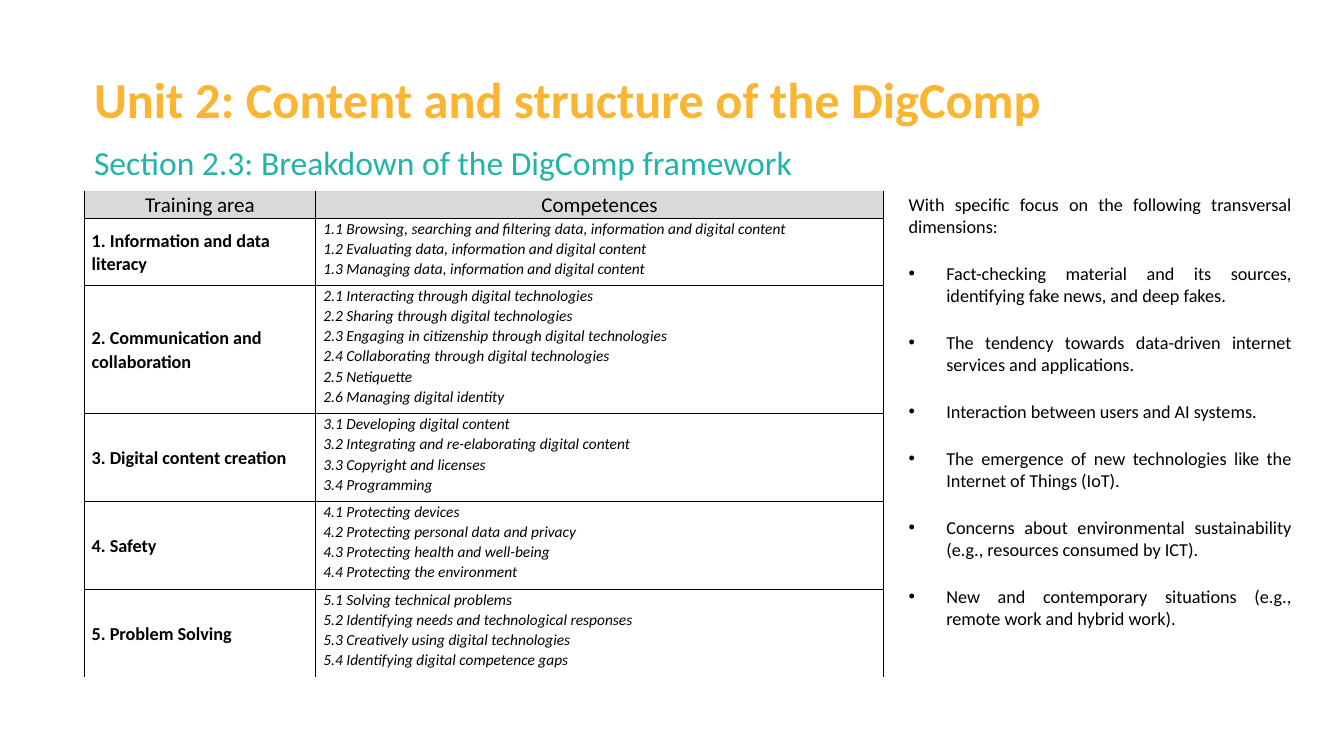
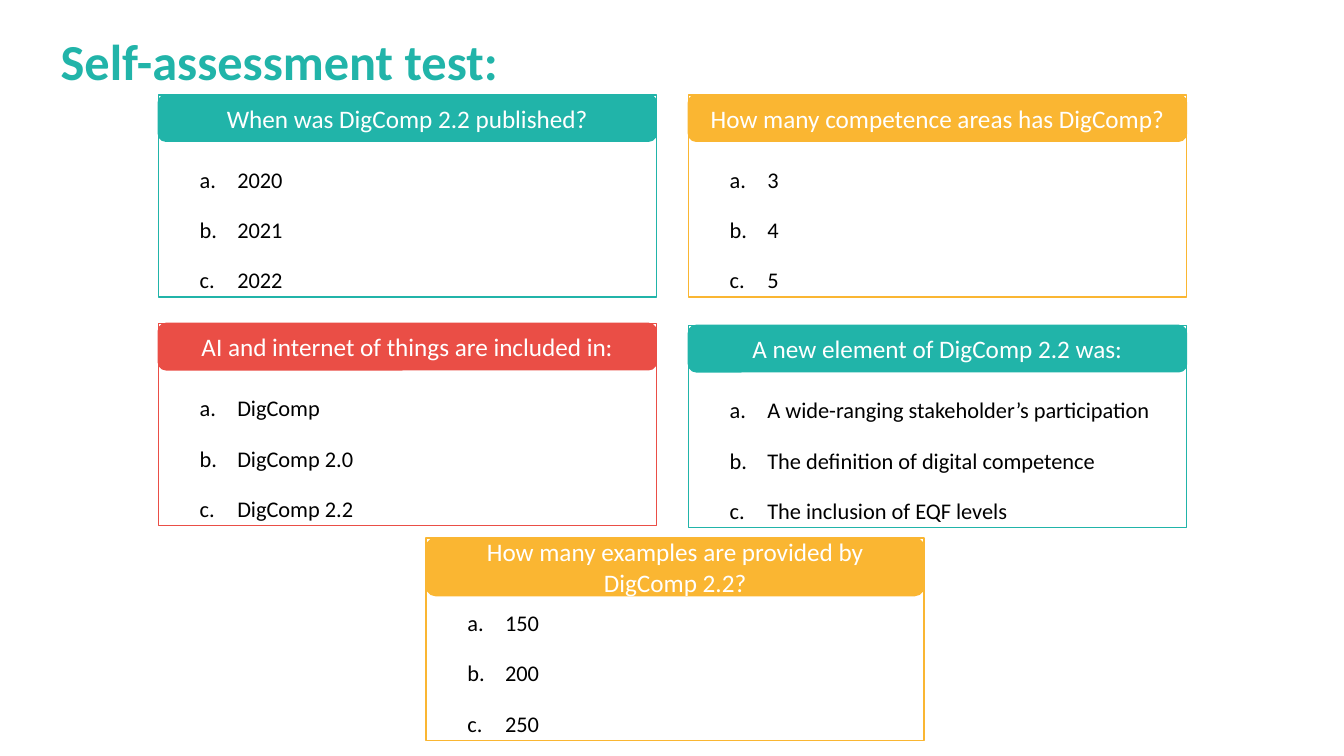
from lxml import etree
from pptx import Presentation
from pptx import util as u
from pptx.dml.color import RGBColor
from pptx.enum import shapes, text
from pptx.oxml.ns import qn

# Shared look
FONT = "Calibri"
TEAL, AMBER, RED = "21B4A9", "FAB632", "EA4E46"
BLACK, WHITE, GREY = "000000", "FFFFFF", "D9D9D9"
LEFT, CENTER, JUSTIFY = text.PP_ALIGN.LEFT, text.PP_ALIGN.CENTER, text.PP_ALIGN.JUSTIFY
TOP, MIDDLE = text.MSO_ANCHOR.TOP, text.MSO_ANCHOR.MIDDLE
HANG = 0.95  # hanging indent of lists, cm

# Content: framework slide
HEADERS = ("Training area", "Competences")
AREAS = [
    ("1. Information and data literacy", [
        "1.1 Browsing, searching and filtering data, information and digital content",
        "1.2 Evaluating data, information and digital content",
        "1.3 Managing data, information and digital content"]),
    ("2. Communication and collaboration", [
        "2.1 Interacting through digital technologies",
        "2.2 Sharing through digital technologies",
        "2.3 Engaging in citizenship through digital technologies",
        "2.4 Collaborating through digital technologies",
        "2.5 Netiquette",
        "2.6 Managing digital identity"]),
    ("3. Digital content creation", [
        "3.1 Developing digital content",
        "3.2 Integrating and re-elaborating digital content",
        "3.3 Copyright and licenses",
        "3.4 Programming"]),
    ("4. Safety", [
        "4.1 Protecting devices",
        "4.2 Protecting personal data and privacy",
        "4.3 Protecting health and well-being",
        "4.4 Protecting the environment"]),
    ("5. Problem Solving", [
        "5.1 Solving technical problems",
        "5.2 Identifying needs and technological responses",
        "5.3 Creatively using digital technologies",
        "5.4 Identifying digital competence gaps"]),
]
FOCUS = "With specific focus on the following transversal dimensions:"
DIMENSIONS = [
    "Fact-checking material and its sources, identifying fake news, and deep fakes.",
    "The tendency towards data-driven internet services and applications.",
    "Interaction between users and AI systems.",
    "The emergence of new technologies like the Internet of Things (IoT).",
    "Concerns about environmental sustainability (e.g., resources consumed by ICT).",
    "New and contemporary situations (e.g., remote work and hybrid work).",
]

# Content: test slide (left, top, band height in cm, colour, question, answers)
COL_1, COL_2, COL_MID = 3.99, 17.35, 10.74
QUESTIONS = [
    (COL_1, 2.39, 1.17, TEAL, "When was DigComp 2.2 published?", ["2020", "2021", "2022"]),
    (COL_2, 2.39, 1.17, AMBER, "How many competence areas has DigComp?", ["3", "4", "5"]),
    (COL_1, 8.15, 1.17, RED, "AI and internet of things are included in:",
     ["DigComp", "DigComp 2.0", "DigComp 2.2"]),
    (COL_2, 8.2, 1.17, TEAL, "A new element of DigComp 2.2 was:",
     ["A wide-ranging stakeholder’s participation",
      "The definition of digital competence",
      "The inclusion of EQF levels"]),
    (COL_MID, 13.56, 1.45, AMBER, "How many examples are provided by DigComp 2.2?",
     ["150", "200", "250"]),
]
CARD_W, CARD_H = 12.55, 5.1


def rgb(value):
    return RGBColor.from_string(value)


def box(*lengths):
    return [u.Cm(v) for v in lengths]


def write(tf, lines, size, color=BLACK, bold=False, italic=False, align=LEFT,
          spacing=None, before=None, bullet=None):
    """Write one paragraph per line; bullet is a character or "abc"."""
    for line in lines:
        p = tf.paragraphs[0]
        if p.runs:
            p = tf.add_paragraph()
        p.alignment = align
        if spacing:
            p.line_spacing = spacing
        if before:
            p.space_before = u.Pt(before)
        if bullet:
            pPr = p._p.get_or_add_pPr()
            pPr.set("marL", str(u.Cm(HANG)))
            pPr.set("indent", str(-u.Cm(HANG)))
            if bullet == "abc":
                etree.SubElement(pPr, qn("a:buAutoNum"), type="alphaLcPeriod")
            else:
                etree.SubElement(pPr, qn("a:buFont"), typeface="Arial")
                etree.SubElement(pPr, qn("a:buChar"), char=bullet)
        r = p.add_run()
        r.text = line
        f = r.font
        f.name, f.size, f.bold, f.italic = FONT, u.Pt(size), bold, italic
        f.color.rgb = rgb(color)


def add_text(parent, place, lines, size, **style):
    tf = parent.add_textbox(*box(*place)).text_frame
    tf.word_wrap = True
    write(tf, lines, size, **style)
    return tf


def add_title(s, place, title, color):
    return add_text(s.shapes, place, [title], 36, color=color, bold=True)


def set_borders(cell, visible):
    """Draw the visible sides in black and switch the others off."""
    tcPr = cell._tc.get_or_add_tcPr()
    for i, side in enumerate("LRTB"):
        ln = etree.Element(qn("a:ln" + side), w=str(u.Pt(1)))
        if side in visible:
            fill = etree.SubElement(ln, qn("a:solidFill"))
            etree.SubElement(fill, qn("a:srgbClr"), val=BLACK)
        else:
            etree.SubElement(ln, qn("a:noFill"))
        tcPr.insert(i, ln)


def fill_cell(cell, lines, size, anchor, sides, fill=None, **style):
    cell.margin_left = cell.margin_right = u.Cm(0.19)
    cell.margin_top = cell.margin_bottom = 0
    cell.vertical_anchor = anchor
    if fill:
        cell.fill.solid()
        cell.fill.fore_color.rgb = rgb(fill)
    else:
        cell.fill.background()
    set_borders(cell, sides)
    write(cell.text_frame, lines, size, spacing=1.06, **style)


def add_framework_table(s):
    widths = (5.84, 14.3)
    heights = [0.69] + [0.17 + 0.51 * len(items) for _, items in AREAS]
    table = s.shapes.add_table(len(heights), 2, *box(2.12, 4.81, sum(widths), sum(heights))).table
    table.first_row = table.horz_banding = False
    for column, width in zip(table.columns, widths):
        column.width = u.Cm(width)
    for row, height in zip(table.rows, heights):
        row.height = u.Cm(height)
    for c, header in enumerate(HEADERS):
        fill_cell(table.cell(0, c), [header], 15, TOP, "LRB", fill=GREY, align=CENTER)
    for n, (area, items) in enumerate(AREAS, 1):
        sides = "LRT" if n == len(AREAS) else "LRTB"
        fill_cell(table.cell(n, 0), [area], 13, MIDDLE, sides, bold=True)
        fill_cell(table.cell(n, 1), items, 11, TOP, sides, italic=True, align=JUSTIFY)


def add_panel(parent, preset, place, color, filled):
    sp = parent.add_shape(preset, *box(*place))
    sp.shadow.inherit = False
    sp.line.color.rgb = rgb(color)
    sp.line.width = u.Pt(1)
    if filled:
        sp.fill.solid()
        sp.fill.fore_color.rgb = rgb(color)
    else:
        sp.fill.background()
    return sp


def add_question(s, left, top, band_h, color, question, answers):
    card = s.shapes.add_group_shape().shapes
    kind = shapes.MSO_SHAPE
    add_panel(card, kind.RECTANGLE, (left, top, CARD_W, CARD_H), color, False)
    band = add_panel(card, kind.ROUNDED_RECTANGLE, (left, top, CARD_W, band_h), color, True)
    tf = band.text_frame
    tf.word_wrap = True
    tf.vertical_anchor = MIDDLE
    write(tf, [question], 18, color=WHITE, align=CENTER)
    add_text(card, (left + 0.79, top + 1.07, CARD_W - 0.81, 3.94), answers, 16,
             spacing=u.Pt(36), bullet="abc")


def main():
    prs = Presentation()
    prs.slide_width, prs.slide_height = box(33.87, 19.05)
    blank = prs.slide_layouts[6]

    # Framework breakdown
    s = prs.slides.add_slide(blank)
    add_title(s, (2.12, 1.6, 25.8, 1.8), "Unit 2: Content and structure of the DigComp", AMBER)
    add_text(s.shapes, (2.12, 3.46, 27.74, 1.28),
             ["Section 2.3: Breakdown of the DigComp framework"], 24, color=TEAL)
    add_framework_table(s)
    tf = add_text(s.shapes, (22.65, 4.75, 10.14, 11.33), [FOCUS], 13, align=JUSTIFY)
    write(tf, DIMENSIONS, 13, align=JUSTIFY, before=18, bullet="•")

    # Self-assessment test
    s = prs.slides.add_slide(blank)
    tf = add_title(s, (1.53, 0.74, 22.9, 1.55), "Self-assessment test:", TEAL)
    tf.margin_left = tf.margin_right = tf.margin_top = tf.margin_bottom = 0
    tf.vertical_anchor = MIDDLE
    for question in QUESTIONS:
        add_question(s, *question)

    prs.save("out.pptx")


if __name__ == "__main__":
    main()
